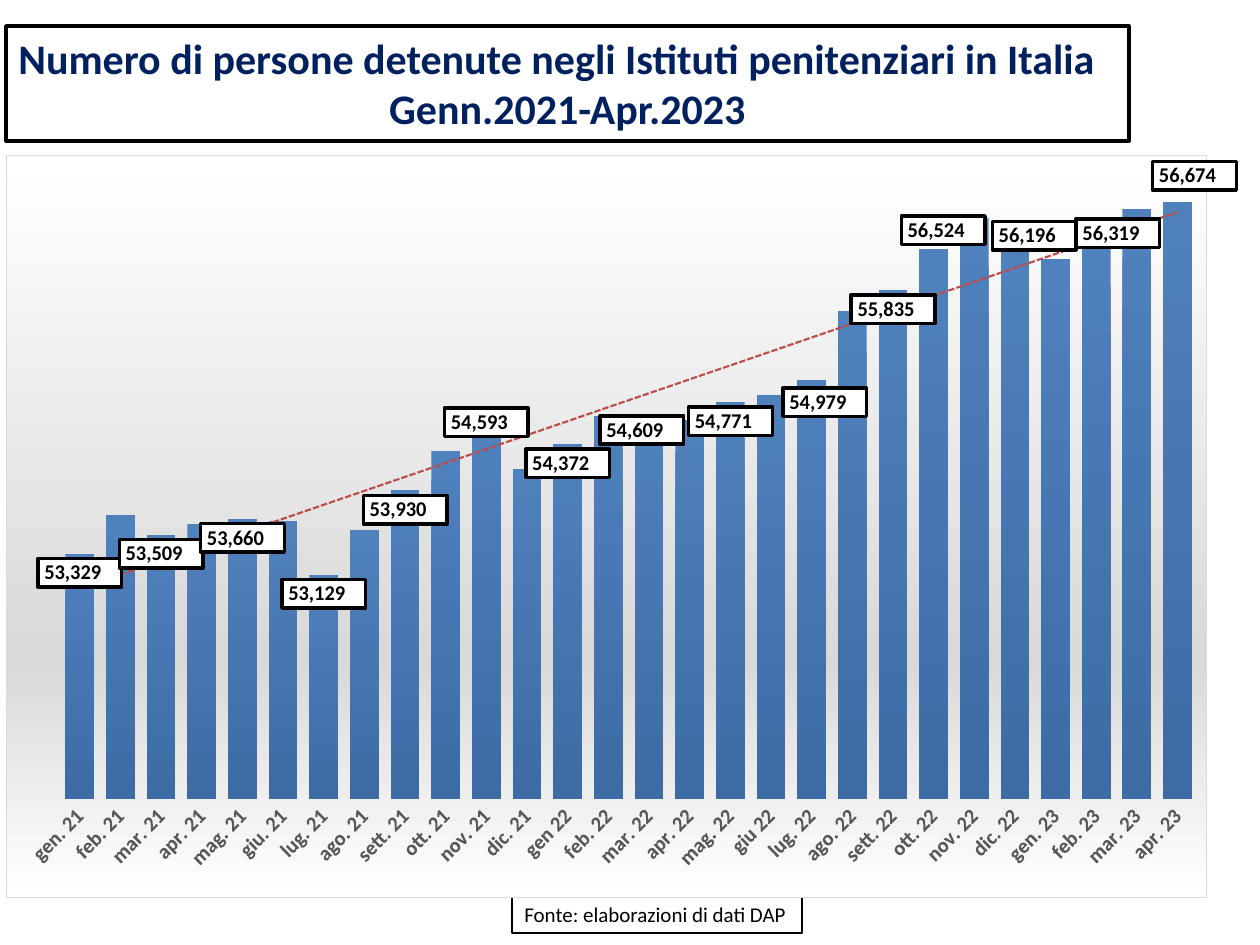
"""Slide on the number of people held in Italian prisons, with a column chart and trend line."""
import copy

import lxml.etree
import pptx
import pptx.chart.data
import pptx.dml.color
import pptx.enum.chart
import pptx.enum.shapes
import pptx.enum.text
import pptx.oxml
import pptx.oxml.ns
import pptx.util

RGBColor = pptx.dml.color.RGBColor
ALIGN = pptx.enum.text.PP_ALIGN
WHITE = RGBColor(0xFF, 0xFF, 0xFF)
BLACK = RGBColor(0x00, 0x00, 0x00)
NAVY = RGBColor(0x00, 0x20, 0x60)
GREY = RGBColor(0x59, 0x59, 0x59)
PALE = RGBColor(0xD9, 0xD9, 0xD9)
BLUE = RGBColor(0x4F, 0x81, 0xBD)
DEEP_BLUE = RGBColor(0x3D, 0x6C, 0xA4)
RED = RGBColor(0xBF, 0x4C, 0x48)

FONT = "Calibri"
NUMBER_FORMAT = '_-* #,##0\\ _€_-;\\-* #,##0\\ _€_-;_-* "-"?'
TITLE = [
    ("Numero di persone detenute negli Istituti penitenziari in Italia", ALIGN.LEFT),
    ("Genn.2021-Apr.2023", ALIGN.CENTER),
]
SOURCE = [("Fonte: elaborazioni di dati DAP", ALIGN.LEFT)]
DETAINEES = [
    ("gen. 21", 53329), ("feb. 21", 53697), ("mar. 21", 53509), ("apr. 21", 53608),
    ("mag. 21", 53660), ("giu. 21", 53637), ("lug. 21", 53129), ("ago. 21", 53557),
    ("sett. 21", 53930), ("ott. 21", 54307), ("nov. 21", 54593), ("dic. 21", 54134),
    ("gen 22", 54372), ("feb. 22", 54635), ("mar. 22", 54609), ("apr. 22", 54595),
    ("mag. 22", 54771), ("giu 22", 54841), ("lug. 22", 54979), ("ago. 22", 55637),
    ("sett. 22", 55835), ("ott. 22", 56225), ("nov. 22", 56524), ("dic. 22", 56196),
    ("gen. 23", 56127), ("feb. 23", 56319), ("mar. 23", 56605), ("apr. 23", 56674),
]
HIDDEN_LABELS = [*range(1, 23, 2), 24, 26]
LABEL_SHIFTS_PX = {10: (0, -18), 14: (-7, -8), 18: (13, 3), 22: (-31, -7),
                   23: (19, -36), 25: (21, -25), 27: (17, -45)}
TITLE_BOX = (6, 26, 1123, 115)
SOURCE_BOX = (512, 895, 290, 38)
CHART_BOX = (6, 155, 1232, 743)
PLOT_LAYOUT = {"x": 0.044, "y": 0.016, "w": 0.949, "h": 0.851}
DRAWN_CHART_WIDTH = 1200
SCALE = 914400 / 126
NAMESPACES = pptx.oxml.ns.nsdecls("c", "a")
qn = pptx.oxml.ns.qn


def px(*lengths):
    return [pptx.util.Emu(round(length * SCALE)) for length in lengths]


def element(tag, inner="", attributes=""):
    return pptx.oxml.parse_xml(f"<c:{tag} {NAMESPACES} {attributes}>{inner}</c:{tag}>")


def solid(color):
    return f'<a:solidFill><a:srgbClr val="{color}"/></a:solidFill>'


def outline(color, points, dash="solid"):
    width = round(points * 12700)
    return f'<a:ln w="{width}">{solid(color)}<a:prstDash val="{dash}"/></a:ln>'


def gradient(*stops):
    marks = "".join(f'<a:gs pos="{place * 1000}"><a:srgbClr val="{color}"/></a:gs>'
                    for place, color in stops)
    return f'<a:gradFill><a:gsLst>{marks}</a:gsLst><a:lin ang="5400000" scaled="0"/></a:gradFill>'


def manual_layout(places, modes=""):
    values = "".join(f'<c:{name} val="{value}"/>' for name, value in places.items())
    return element("layout", f"<c:manualLayout>{modes}{values}</c:manualLayout>")


def style_font(font, size, color, bold=False):
    font.name = FONT
    font.size = pptx.util.Pt(size)
    font.bold = bold
    font.color.rgb = color


def add_box(page, place, lines, line_width, size, color, bold=False):
    box = page.shapes.add_shape(pptx.enum.shapes.MSO_SHAPE.RECTANGLE, *px(*place))
    box.shadow.inherit = False
    box.fill.solid()
    box.fill.fore_color.rgb = WHITE
    box.line.color.rgb = BLACK
    box.line.width = pptx.util.Pt(line_width)
    frame = box.text_frame
    frame.word_wrap = False
    frame.vertical_anchor = pptx.enum.text.MSO_ANCHOR.TOP
    for number, (text, alignment) in enumerate(lines):
        para = frame.add_paragraph() if number else frame.paragraphs[0]
        para.text = text
        para.alignment = alignment
        style_font(para.font, size, color, bold)


def add_labels(series):
    labels = series.data_labels
    labels.number_format = NUMBER_FORMAT
    labels.number_format_is_linked = False
    labels.show_value = True
    labels.position = pptx.enum.chart.XL_LABEL_POSITION.INSIDE_END
    style_font(labels.font, 12, BLACK, True)
    root = labels._element
    for leader in root.findall(qn("c:showLeaderLines")):
        root.remove(leader)
    root.find(qn("c:numFmt")).addnext(element("spPr", solid(WHITE) + outline(BLACK, 2)))
    shared = list(root)
    points = []
    for index in sorted([*HIDDEN_LABELS, *LABEL_SHIFTS_PX]):
        point = element("dLbl", f'<c:idx val="{index}"/>')
        if index in HIDDEN_LABELS:
            point.append(element("delete", attributes='val="1"'))
        else:
            right, down = LABEL_SHIFTS_PX[index]
            point.append(manual_layout({"x": round(right / DRAWN_CHART_WIDTH, 3),
                                        "y": round(down / CHART_BOX[3], 3)}))
            point.extend(copy.deepcopy(shared))
        points.append(point)
    for position, point in enumerate(points):
        root.insert(position, point)
    trend = f'<c:spPr>{outline(RED, 1.25, "sysDash")}</c:spPr><c:trendlineType val="linear"/>'
    root.addnext(element("trendline", trend + '<c:dispRSqr val="0"/><c:dispEq val="0"/>'))


def style_axes(chart):
    months = chart.category_axis
    months.major_tick_mark = pptx.enum.chart.XL_TICK_MARK.NONE
    months.format.line.fill.background()
    style_font(months.tick_labels.font, 12, GREY, True)
    months._element.find(f"{qn('c:txPr')}/{qn('a:bodyPr')}").set("rot", "-2700000")
    people = chart.value_axis
    people.minimum_scale = 51000
    people.maximum_scale = 57000
    people.has_major_gridlines = False
    people.visible = False


def add_detainee_chart(page):
    data = pptx.chart.data.CategoryChartData(number_format=NUMBER_FORMAT)
    data.categories = [month for month, count in DETAINEES]
    data.add_series("Series 1", [count for month, count in DETAINEES])
    kind = pptx.enum.chart.XL_CHART_TYPE.COLUMN_CLUSTERED
    chart = page.shapes.add_chart(kind, *px(*CHART_BOX), data).chart
    chart.has_title = False
    chart.has_legend = False
    style_font(chart.font, 11, BLACK)
    style_axes(chart)
    plot = chart.plots[0]
    plot.gap_width = 41
    plot.vary_by_categories = False
    series = plot.series[0]
    fill = series.format.fill
    fill.gradient()
    fill.gradient_angle = 270
    for stop, place, color in zip(fill.gradient_stops, (0, 1), (BLUE, DEEP_BLUE)):
        stop.position = place
        stop.color.rgb = color
    add_labels(series)
    root = chart._chartSpace
    area = root.find(f"{qn('c:chart')}/{qn('c:plotArea')}")
    for layout in area.findall(qn("c:layout")):
        area.remove(layout)
    modes = '<c:layoutTarget val="inner"/><c:xMode val="edge"/><c:yMode val="edge"/>'
    area.insert(0, manual_layout(PLOT_LAYOUT, modes))
    background = gradient((0, WHITE), (68, PALE), (100, WHITE))
    root.find(qn("c:chart")).addnext(element("spPr", background + outline(PALE, 0.75)))


def main():
    deck = pptx.Presentation()
    deck.slide_width, deck.slide_height = px(1260, 945)
    page = deck.slides.add_slide(deck.slide_layouts[6])
    add_box(page, TITLE_BOX, TITLE, 2, 24, NAVY, True)
    add_box(page, SOURCE_BOX, SOURCE, 0.75, 12, BLACK)
    add_detainee_chart(page)
    deck.save("out.pptx")


if __name__ == "__main__":
    main()
